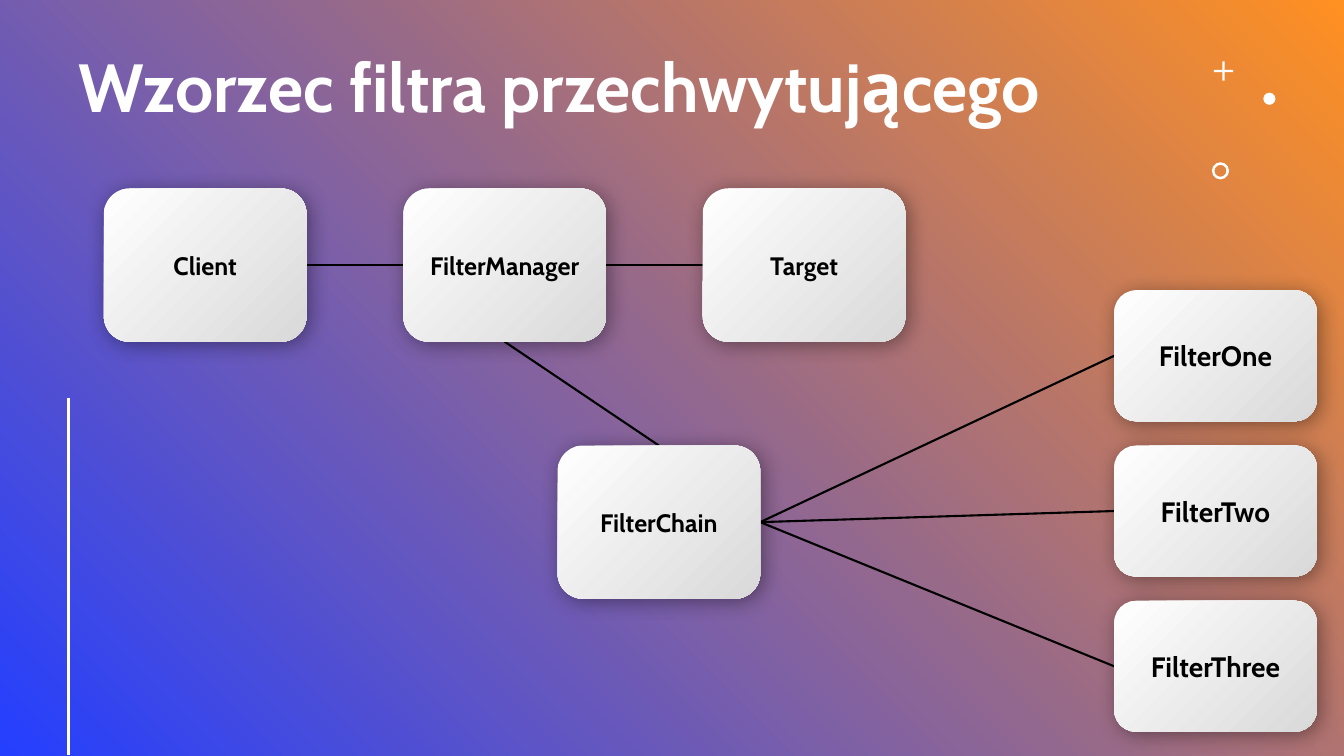
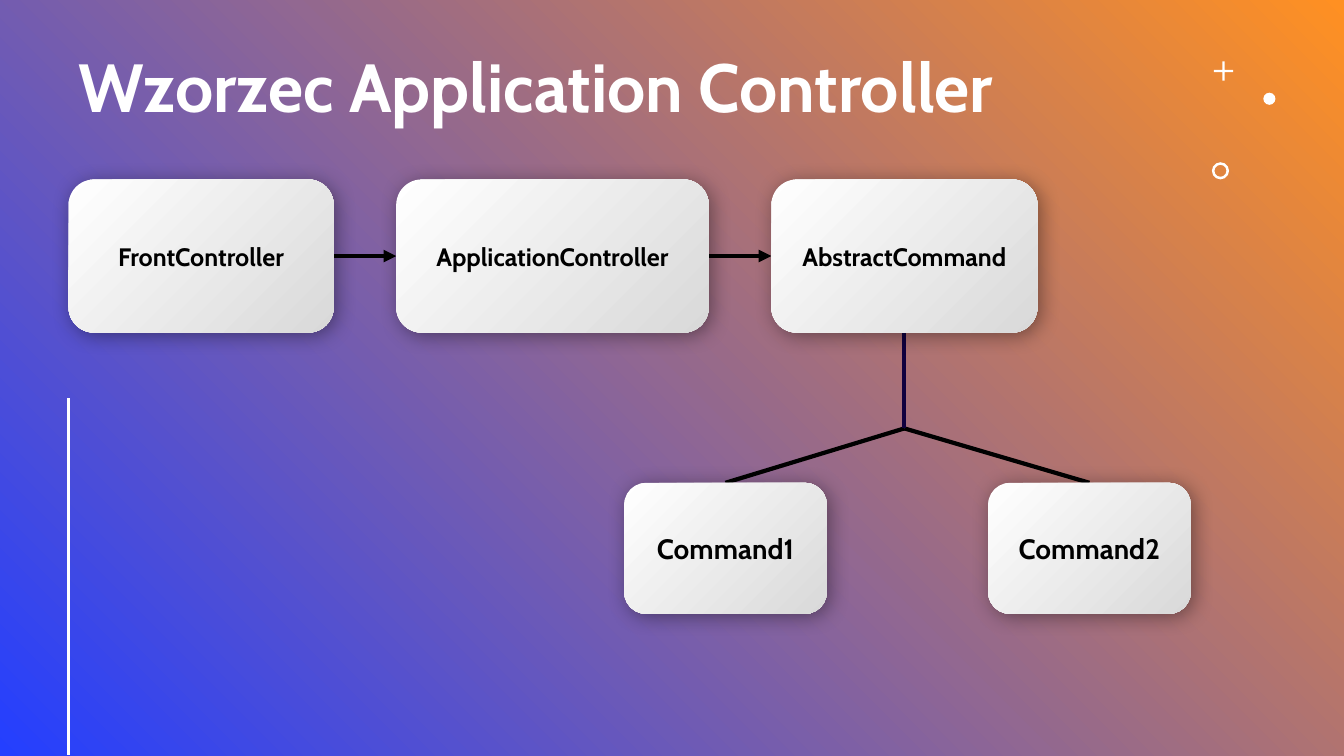
from lxml import etree
from pptx import Presentation
from pptx.dml.color import RGBColor
from pptx.enum.shapes import MSO_CONNECTOR, MSO_SHAPE
from pptx.enum.text import MSO_ANCHOR, MSO_AUTO_SIZE, PP_ALIGN
from pptx.oxml.ns import qn
from pptx.util import Inches, Pt

STRAIGHT = MSO_CONNECTOR.STRAIGHT
RECTANGLE = MSO_SHAPE.RECTANGLE
ROUNDED = MSO_SHAPE.ROUNDED_RECTANGLE
CROSS = MSO_SHAPE.CROSS
OVAL = MSO_SHAPE.OVAL
DONUT = MSO_SHAPE.DONUT
MIDDLE = MSO_ANCHOR.MIDDLE
BOTTOM_ANCHOR = MSO_ANCHOR.BOTTOM
NO_AUTOSIZE = MSO_AUTO_SIZE.NONE
LEFT_ALIGN = PP_ALIGN.LEFT
CENTER = PP_ALIGN.CENTER

SLIDE_WIDTH, SLIDE_HEIGHT = 13.33, 7.5
TITLE_ONLY = 5
TOP, LEFT, BOTTOM, RIGHT = range(4)


def color(value):
    return RGBColor.from_string(value)


class Deck:
    FONT = "Cabin"
    WHITE = "FFFFFF"
    BLACK = "000000"
    NAVY = "10013F"
    BACKDROP = ("243FFF", "FF9022")
    BOX = ("FFFFFF", "D9D9D9")

    def __init__(self):
        self.presentation = Presentation()
        self.presentation.slide_width = Inches(SLIDE_WIDTH)
        self.presentation.slide_height = Inches(SLIDE_HEIGHT)
        self.slide = None
        self.backdrop = None

    def add_slide(self, title):
        layout = self.presentation.slide_layouts[TITLE_ONLY]
        self.slide = self.presentation.slides.add_slide(layout)
        self.backdrop = self.shape(RECTANGLE, 0, 0, SLIDE_WIDTH, SLIDE_HEIGHT)
        self.gradient(self.backdrop, self.BACKDROP, 45)
        self.title(title)
        self.ornaments()

    def title(self, text):
        shape = self.slide.shapes.title
        shape.element.addprevious(self.backdrop.element)
        shape.left, shape.top = Inches(0.68), Inches(0.42)
        shape.width, shape.height = Inches(12.21), Inches(0.89)
        shape.text_frame.auto_size = NO_AUTOSIZE
        self.label(shape, text, 48.6, self.WHITE, LEFT_ALIGN, BOTTOM_ANCHOR)
        shape.text_frame.paragraphs[0].line_spacing = 0.9

    def ornaments(self):
        for kind, left, top, size, adjustment in (
            (CROSS, 12.04, 0.61, 0.19, 0.44),
            (OVAL, 12.53, 0.92, 0.12, None),
            (DONUT, 12.02, 1.61, 0.17, 0.15),
        ):
            ornament = self.shape(kind, left, top, size, size)
            ornament.fill.solid()
            ornament.fill.fore_color.rgb = color(self.WHITE)
            if adjustment:
                ornament.adjustments[0] = adjustment
        self.line((0.68, 3.95), (0.68, 7.49), 2, self.WHITE)

    def shape(self, kind, left, top, width, height):
        shape = self.slide.shapes.add_shape(
            kind, Inches(left), Inches(top), Inches(width), Inches(height)
        )
        shape.line.fill.background()
        shape.shadow.inherit = False
        return shape

    def gradient(self, shape, stops, angle):
        shape.fill.gradient()
        shape.fill.gradient_angle = angle
        for stop, value in zip(shape.fill.gradient_stops, stops):
            stop.color.rgb = color(value)

    def label(self, shape, text, size, value, alignment, anchor):
        frame = shape.text_frame
        frame.text = text
        frame.vertical_anchor = anchor
        paragraph = frame.paragraphs[0]
        paragraph.alignment = alignment
        font = paragraph.runs[0].font
        font.name, font.size, font.bold = self.FONT, Pt(size), True
        font.color.rgb = color(value)

    def box(self, text, left, top, width=2.01, height=1.52, size=18):
        shape = self.shape(ROUNDED, left, top, width, height)
        self.gradient(shape, self.BOX, 315)
        self.drop_shadow(shape)
        self.label(shape, text, size, self.BLACK, CENTER, MIDDLE)
        return shape

    def small_box(self, text, left, top):
        return self.box(text, left, top, height=1.3, size=20)

    def drop_shadow(self, shape):
        effects = shape.element.spPr.find(qn("a:effectLst"))
        shadow = etree.SubElement(
            effects, qn("a:outerShdw"), blurRad=str(Pt(15)), dist=str(Pt(3)),
            dir="2700000", algn="tl", rotWithShape="0",
        )
        shade = etree.SubElement(shadow, qn("a:srgbClr"), val=self.BLACK)
        etree.SubElement(shade, qn("a:alpha"), val="40000")

    def line(self, start, end, width, value):
        points = [Inches(length) for length in (*start, *end)]
        connector = self.slide.shapes.add_connector(STRAIGHT, *points)
        connector.line.width = Pt(width)
        connector.line.color.rgb = color(value)
        etree.SubElement(connector.element.spPr, qn("a:effectLst"))
        self.backdrop.element.addnext(connector.element)
        return connector

    def connect(self, start, start_side, end, end_side, width=1.5, arrow=False):
        connector = self.line((0, 0), (0, 0), width, self.BLACK)
        connector.begin_connect(start, start_side)
        connector.end_connect(end, end_side)
        if arrow:
            etree.SubElement(
                connector.get_or_add_ln(), qn("a:tailEnd"), type="triangle"
            )

    def branch(self, box, side, junction, value=BLACK):
        connector = self.line(junction, junction, 3, value)
        connector.begin_connect(box, side)

    def save(self):
        self.presentation.save("out.pptx")


def intercepting_filter(deck):
    deck.add_slide("Wzorzec filtra przechwytującego")
    client, manager, target = [
        deck.box(name, 1.03 + 2.97 * column, 1.87)
        for column, name in enumerate(("Client", "FilterManager", "Target"))
    ]
    chain = deck.box("FilterChain", 5.53, 4.42)
    deck.connect(client, RIGHT, manager, LEFT)
    deck.connect(manager, RIGHT, target, LEFT)
    deck.connect(manager, BOTTOM, chain, TOP)
    for row, name in enumerate(("FilterOne", "FilterTwo", "FilterThree")):
        filter_box = deck.small_box(name, 11.05, 2.88 + 1.54 * row)
        deck.connect(chain, RIGHT, filter_box, LEFT)


def application_controller(deck):
    deck.add_slide("Wzorzec Application Controller")
    left, gap = 0.68, 0.62
    previous = None
    for name, width in (
        ("FrontController", 2.63),
        ("ApplicationController", 3.1),
        ("AbstractCommand", 2.64),
    ):
        box = deck.box(name, left, 1.78, width)
        if previous:
            deck.connect(previous, RIGHT, box, LEFT, width=3, arrow=True)
        previous = box
        left += width + gap
    junction = (8.97, 4.25)
    deck.branch(previous, BOTTOM, junction, deck.NAVY)
    for column, name in enumerate(("Command1", "Command2")):
        command = deck.small_box(name, 6.19 + 3.61 * column, 4.79)
        deck.branch(command, TOP, junction)


def main():
    deck = Deck()
    intercepting_filter(deck)
    application_controller(deck)
    deck.save()


if __name__ == "__main__":
    main()
